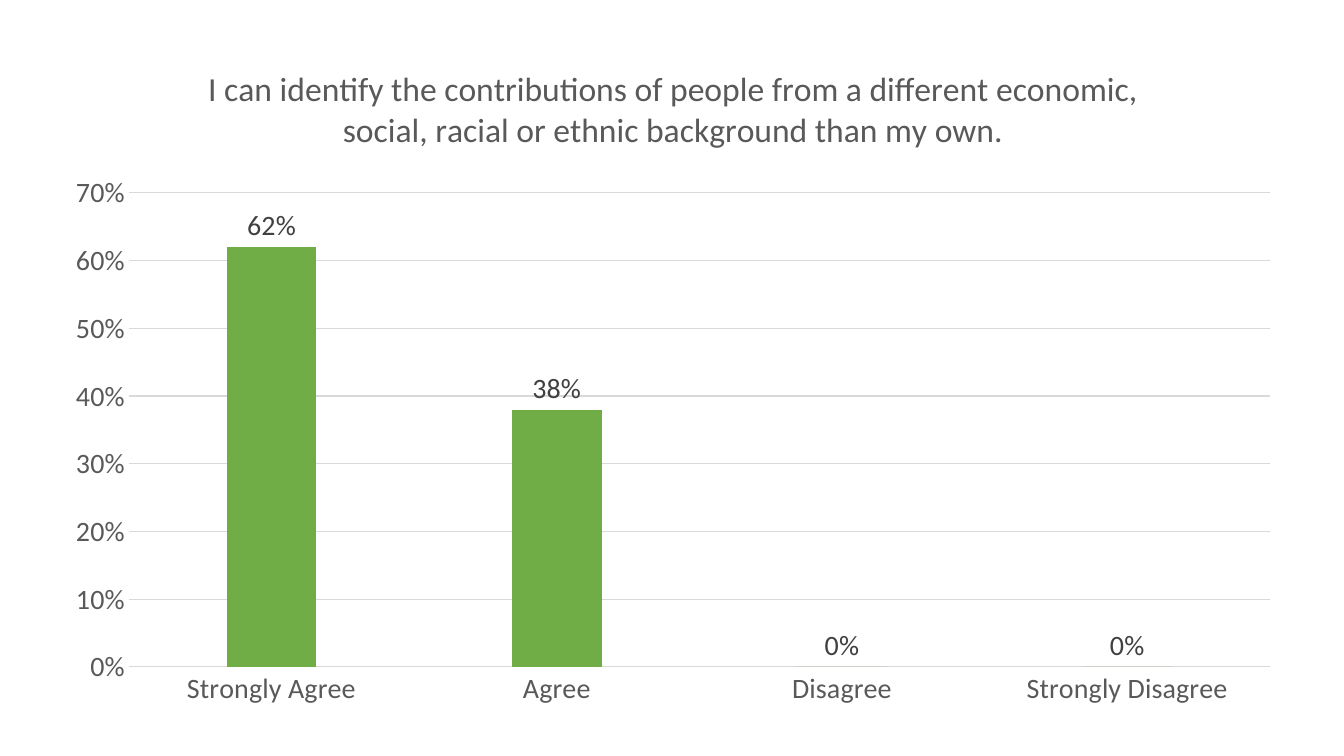
from lxml import etree
from pptx import Presentation
from pptx.chart.data import CategoryChartData
from pptx.dml.color import RGBColor
from pptx.enum.chart import XL_CHART_TYPE as ChartType
from pptx.enum.chart import XL_LABEL_POSITION as LabelPos
from pptx.enum.chart import XL_TICK_MARK as Tick
from pptx.oxml.ns import qn
from pptx.util import Pt

PX = 9072  # EMU per pixel at 100.8 pixels to the inch
FONT = "Calibri"
GREY, DARK, RULE, GREEN = "595959", "404040", "D9D9D9", "70AD47"


def rgb(color):
    return RGBColor.from_string(color)


def style(font, size, color):
    font.name, font.size, font.bold = FONT, Pt(size), False
    font.color.rgb = rgb(color)


prs = Presentation()
prs.slide_width, prs.slide_height = 1344 * PX, 756 * PX
s = prs.slides.add_slide(prs.slide_layouts[6])

# Chart frame and inner plot area, in px
left, top, width, height = 51, 41, 1244, 678
plot_left, plot_top, plot_width, plot_height = 129, 193, 1141, 474

data = CategoryChartData(number_format="0%")
data.categories = ["Strongly Agree", "Agree", "Disagree", "Strongly Disagree"]
data.add_series("Series 1", [0.62, 0.38, 0, 0])
chart = s.shapes.add_chart(
    ChartType.COLUMN_CLUSTERED, left * PX, top * PX, width * PX, height * PX, data
).chart
style(chart.font, 20, "000000")
chart.has_legend = False

# Title
chart.has_title = True
p = chart.chart_title.text_frame.paragraphs[0]
p.text = ("I can identify the contributions of people from a different economic, "
          "social, racial or ethnic background than my own.")
style(p.font, 24, GREY)
chart.chart_title.include_in_layout = False

# Columns and their labels
plot = chart.plots[0]
plot.gap_width, plot.overlap = 219, -27
plot.vary_by_categories = False
series = plot.series[0]
series.format.fill.solid()
series.format.fill.fore_color.rgb = rgb(GREEN)
labels = series.data_labels
labels.show_value = True
labels.position = LabelPos.OUTSIDE_END
labels.number_format, labels.number_format_is_linked = "0%", False
style(labels.font, 20, DARK)

# Axes
cat_axis, val_axis = chart.category_axis, chart.value_axis
for axis in (cat_axis, val_axis):
    axis.major_tick_mark = axis.minor_tick_mark = Tick.NONE
    style(axis.tick_labels.font, 20, GREY)
val_axis.minimum_scale, val_axis.maximum_scale, val_axis.major_unit = 0, 0.7, 0.1
val_axis.tick_labels.number_format = "0%"
val_axis.tick_labels.number_format_is_linked = False
val_axis.format.line.fill.background()
for line in (cat_axis.format.line, val_axis.major_gridlines.format.line):
    line.color.rgb = rgb(RULE)
    line.width = Pt(0.75)

# Fixed place for the inner plot area
plot_area = chart.element.find(".//" + qn("c:plotArea"))
layout = plot_area.find(qn("c:layout"))
if layout is None:
    layout = etree.Element(qn("c:layout"))
    plot_area.insert(0, layout)
manual = etree.SubElement(layout, qn("c:manualLayout"))
for tag, value in (
    ("layoutTarget", "inner"),
    ("xMode", "edge"),
    ("yMode", "edge"),
    ("x", (plot_left - left) / width),
    ("y", (plot_top - top) / height),
    ("w", plot_width / width),
    ("h", plot_height / height),
):
    etree.SubElement(manual, qn("c:" + tag)).set("val", str(value))

prs.save("out.pptx")
